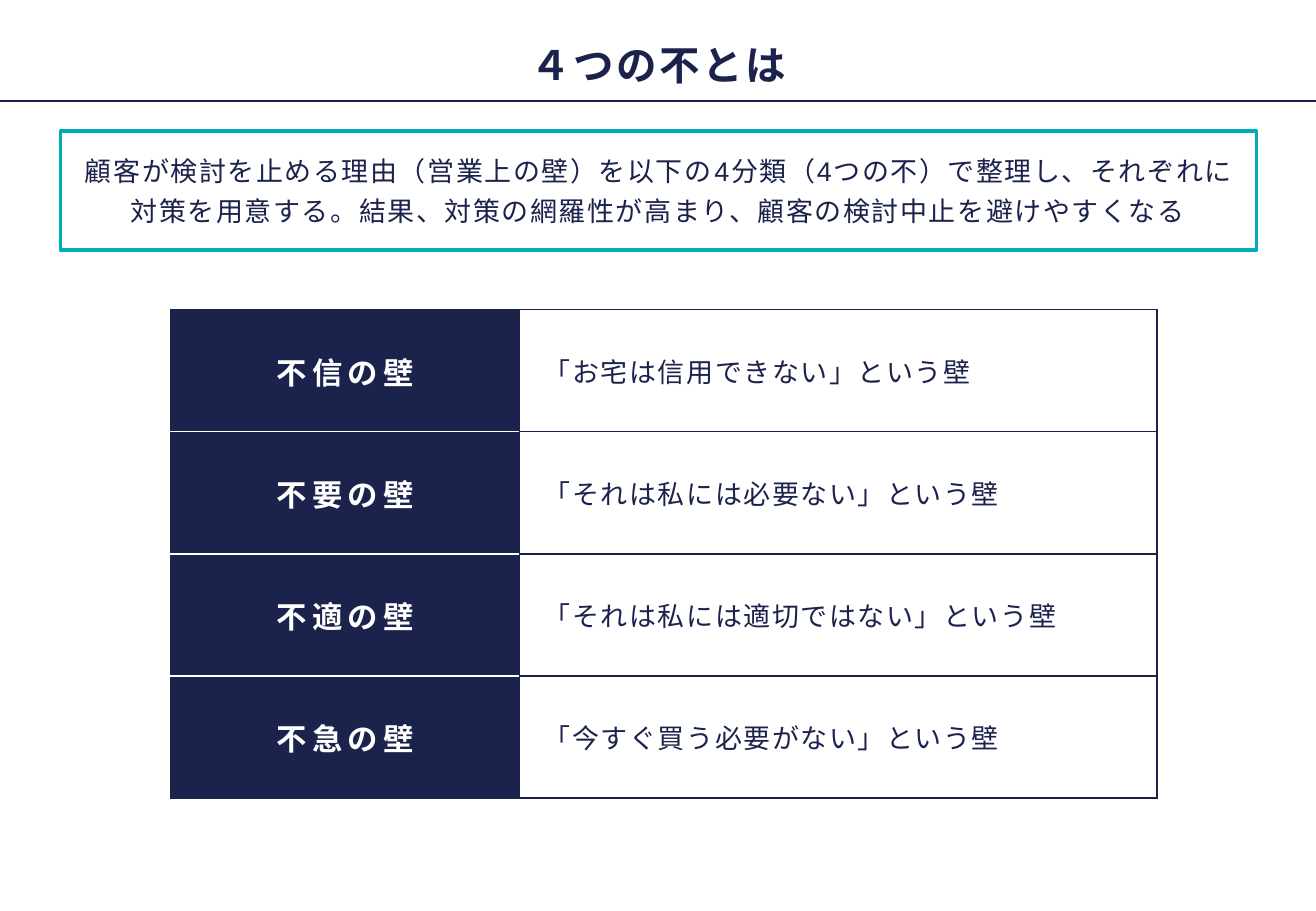
from pptx import Presentation
from pptx.dml.color import RGBColor
from pptx.enum import shapes, text
from pptx.oxml import ns, xmlchemy
from pptx.util import Pt

PX = 4572  # 200 px to the inch
SLIDE_WIDTH, SLIDE_HEIGHT = 2166, 1500
NAVY = RGBColor(0x1B, 0x22, 0x4C)
TEAL = RGBColor(0x00, 0xAC, 0xBA)
WHITE = RGBColor(0xFF, 0xFF, 0xFF)
FONT = "Arial"

TITLE = "４つの不とは"
SUMMARY = [
    "顧客が検討を止める理由（営業上の壁）を以下の4分類（4つの不）で整理し、それぞれに",
    "対策を用意する。結果、対策の網羅性が高まり、顧客の検討中止を避けやすくなる",
]
WALLS = [
    ("不信の壁", "「お宅は信用できない」という壁"),
    ("不要の壁", "「それは私には必要ない」という壁"),
    ("不適の壁", "「それは私には適切ではない」という壁"),
    ("不急の壁", "「今すぐ買う必要がない」という壁"),
]


def px(*lengths):
    return [length * PX for length in lengths]


def add_element(parent, tag, **attributes):
    element = xmlchemy.OxmlElement(tag)
    for name, value in attributes.items():
        element.set(name, str(value))
    parent.append(element)
    return element


def style_paragraph(paragraph, size, color, spacing, bold=False, align=text.PP_ALIGN.CENTER):
    """Format a whole paragraph; spacing is the letter spacing in points."""
    paragraph.alignment = align
    font = paragraph.font
    font.name, font.size, font.bold = FONT, Pt(size), bold
    font.color.rgb = color
    properties = paragraph._p.pPr.find(ns.qn("a:defRPr"))
    properties.set("spc", str(round(spacing * 100)))


def place(shape, box):
    shape.left, shape.top, shape.width, shape.height = px(*box)


def set_frame(frame, horizontal, vertical, wrap):
    frame.margin_left, frame.margin_right = px(horizontal, horizontal)
    frame.margin_top, frame.margin_bottom = px(vertical, vertical)
    frame.vertical_anchor = text.MSO_ANCHOR.MIDDLE
    frame.auto_size = text.MSO_AUTO_SIZE.NONE
    frame.word_wrap = wrap


def build_title(slide, box):
    """Fill the title and draw the rule 28 px below it."""
    title = slide.shapes.title
    place(title, box)
    set_frame(title.text_frame, 8, 8, wrap=False)
    title.text_frame.text = TITLE
    paragraph = title.text_frame.paragraphs[0]
    paragraph.line_spacing = 1.5
    style_paragraph(paragraph, 24, NAVY, 1.5, bold=True)

    rule_top = box[1] + box[3] + 28
    rule = slide.shapes.add_connector(
        shapes.MSO_CONNECTOR.STRAIGHT, *px(0, rule_top, SLIDE_WIDTH, rule_top))
    rule.line.color.rgb, rule.line.width = NAVY, Pt(1)
    add_element(rule._element.spPr, "a:effectLst")


def build_summary(slide, box):
    summary = slide.placeholders[1]
    place(summary, box)
    summary.line.color.rgb, summary.line.width = TEAL, Pt(2)
    frame = summary.text_frame
    set_frame(frame, 32, 24, wrap=True)
    frame.text = "\n".join(SUMMARY)
    for paragraph in frame.paragraphs:
        properties = paragraph._p.get_or_add_pPr()
        properties.set("marL", "0")
        properties.set("indent", "0")
        add_element(properties, "a:buNone")
        paragraph.space_before, paragraph.space_after = Pt(0), Pt(4)
        style_paragraph(paragraph, 16, NAVY, 1)


def set_borders(cell, top, bottom):
    """Draw 1 pt borders: navy at the sides, the given colours above and below."""
    properties = cell._tc.get_or_add_tcPr()
    for side, color in zip("LRTB", (NAVY, NAVY, top, bottom)):
        border = add_element(properties, f"a:ln{side}", w=Pt(1))
        add_element(add_element(border, "a:solidFill"), "a:srgbClr", val=color)


def fill_cell(cell, wording, margin):
    cell.text = wording
    cell.vertical_anchor = text.MSO_ANCHOR.MIDDLE
    cell.margin_left, cell.margin_right = px(margin, margin)
    cell.margin_top, cell.margin_bottom = px(32, 32)
    return cell.text_frame.paragraphs[0]


def build_walls(slide, box):
    """Build the table of walls, with the names in the first 574 px."""
    table = slide.shapes.add_table(len(WALLS), 2, *px(*box)).table
    table.first_row = table.horz_banding = False
    for column, width in zip(table.columns, (574, box[2] - 574)):
        column.width = width * PX
    last = len(WALLS) - 1
    for index, (name, meaning) in enumerate(WALLS):
        name_cell, meaning_cell = table.cell(index, 0), table.cell(index, 1)
        set_borders(name_cell, NAVY if index == 0 else WHITE, NAVY if index == last else WHITE)
        name_cell.fill.solid()
        name_cell.fill.fore_color.rgb = NAVY
        style_paragraph(fill_cell(name_cell, name, 24), 18, WHITE, 3, bold=True)

        set_borders(meaning_cell, NAVY, NAVY)
        meaning_cell.fill.background()
        style_paragraph(fill_cell(meaning_cell, meaning, 40), 16, NAVY, 1,
                        align=text.PP_ALIGN.LEFT)


def main():
    presentation = Presentation()
    presentation.slide_width, presentation.slide_height = px(SLIDE_WIDTH, SLIDE_HEIGHT)
    slide = presentation.slides.add_slide(presentation.slide_layouts[1])
    build_title(slide, (100, 34, 1968, 104))
    build_summary(slide, (100, 216, 1968, 196))
    build_walls(slide, (281, 510, 1623, 804))
    presentation.save("out.pptx")


if __name__ == "__main__":
    main()
